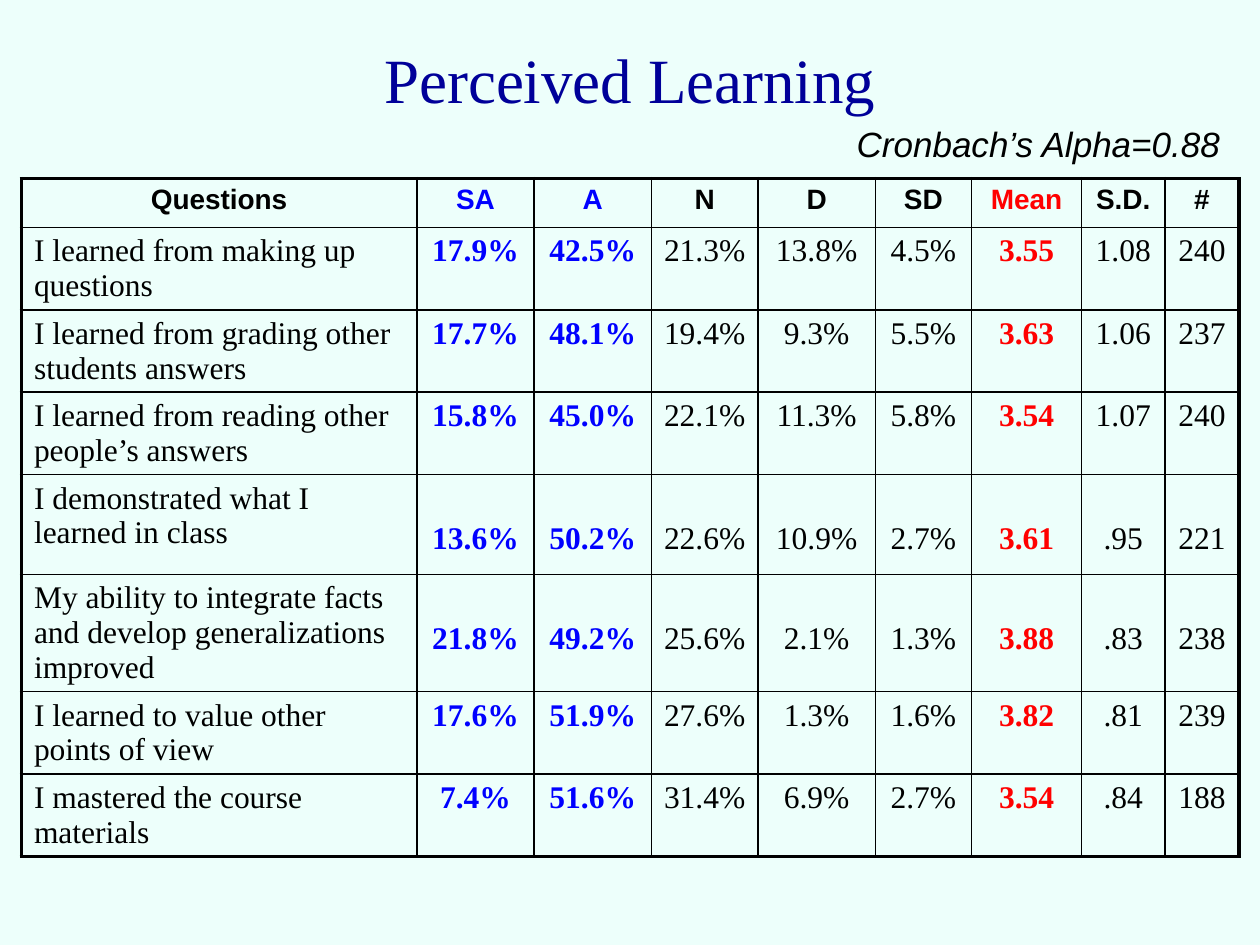
import pptx
import pptx.util
import pptx.dml.color
import pptx.enum.text
import pptx.oxml
import pptx.oxml.ns

Pt = pptx.util.Pt
PP_ALIGN = pptx.enum.text.PP_ALIGN
ANCHOR = pptx.enum.text.MSO_ANCHOR
COLORS = {"background": "EDFFFB", "title": "000099", "text": "000000",
          "agree": "0000FF", "mean": "FF0000"}


def set_font(p, name, size, color, bold=False, italic=False):
    p.font.name = name
    p.font.size = Pt(size)
    p.font.bold = bold
    p.font.italic = italic
    p.font.color.rgb = pptx.dml.color.RGBColor.from_string(COLORS[color])


def add_border(cell, side, width):
    cell._tc.get_or_add_tcPr().append(pptx.oxml.parse_xml(
        f'<a:ln{side} {pptx.oxml.ns.nsdecls("a")} w="{Pt(width)}">'
        f'<a:solidFill><a:srgbClr val="{COLORS["text"]}"/></a:solidFill></a:ln{side}>'))


prs = pptx.Presentation()
prs.slide_width, prs.slide_height = Pt(720), Pt(540)
s = prs.slides.add_slide(prs.slide_layouts[5])
s.background.fill.solid()
s.background.fill.fore_color.rgb = pptx.dml.color.RGBColor.from_string(COLORS["background"])

title = s.shapes.title
title.left, title.top, title.width, title.height = Pt(54), Pt(0), Pt(612), Pt(90)
tf = title.text_frame
tf.text = "Perceived Learning"
tf.vertical_anchor = ANCHOR.MIDDLE
p = tf.paragraphs[0]
p.alignment = PP_ALIGN.CENTER
set_font(p, "Times New Roman", 36, "title")

rows = [
    ["Questions", "SA", "A", "N", "D", "SD", "Mean", "S.D.", "#"],
    ["I learned from making up questions",
     "17.9%", "42.5%", "21.3%", "13.8%", "4.5%", "3.55", "1.08", "240"],
    ["I learned from grading other students answers",
     "17.7%", "48.1%", "19.4%", "9.3%", "5.5%", "3.63", "1.06", "237"],
    ["I learned from reading other people’s answers",
     "15.8%", "45.0%", "22.1%", "11.3%", "5.8%", "3.54", "1.07", "240"],
    ["I demonstrated what I learned in class",
     "13.6%", "50.2%", "22.6%", "10.9%", "2.7%", "3.61", ".95", "221"],
    ["My ability to integrate facts and develop generalizations improved",
     "21.8%", "49.2%", "25.6%", "2.1%", "1.3%", "3.88", ".83", "238"],
    ["I learned to value other points of view",
     "17.6%", "51.9%", "27.6%", "1.3%", "1.6%", "3.82", ".81", "239"],
    ["I mastered the course materials",
     "7.4%", "51.6%", "31.4%", "6.9%", "2.7%", "3.54", ".84", "188"],
]
col_widths = [226, 67, 67, 61, 67, 55, 63, 47.5, 42.5]
row_heights = [28, 47, 47, 47, 57, 67, 47, 47]
col_colors = {1: "agree", 2: "agree", 6: "mean"}
lowered_rows = (4, 5)
last_row, last_col = len(rows) - 1, len(col_widths) - 1

table = s.shapes.add_table(len(rows), len(col_widths), Pt(12.24), Pt(102),
                           Pt(sum(col_widths)), Pt(sum(row_heights))).table
table.first_row = False
table.horz_banding = False
for column, width in zip(table.columns, col_widths):
    column.width = Pt(width)

for i, values in enumerate(rows):
    table.rows[i].height = Pt(row_heights[i])
    for j, value in enumerate(values):
        cell = table.cell(i, j)
        cell.text = value
        p = cell.text_frame.paragraphs[0]
        color = col_colors.get(j, "text")
        if i == 0:
            set_font(p, "Arial", 16, color, bold=True)
        else:
            set_font(p, "Times New Roman", 18, color, bold=j in col_colors)
        p.alignment = PP_ALIGN.LEFT if i and j == 0 else PP_ALIGN.CENTER
        if i in lowered_rows and j:
            cell.margin_top = Pt(27)
        edges = {"L": j == 0, "R": j == last_col, "T": i == 0, "B": i == last_row}
        for side, outer in edges.items():
            add_border(cell, side, 2.25 if outer else 1)
        cell.fill.background()

sp = s.shapes.add_textbox(Pt(482.4), Pt(66.24), Pt(229), Pt(31.7))
tf = sp.text_frame
tf.word_wrap = False
tf.auto_size = pptx.enum.text.MSO_AUTO_SIZE.SHAPE_TO_FIT_TEXT
tf.text = "Cronbach’s Alpha=0.88"
set_font(tf.paragraphs[0], "Arial", 20, "text", italic=True)

prs.save("out.pptx")
